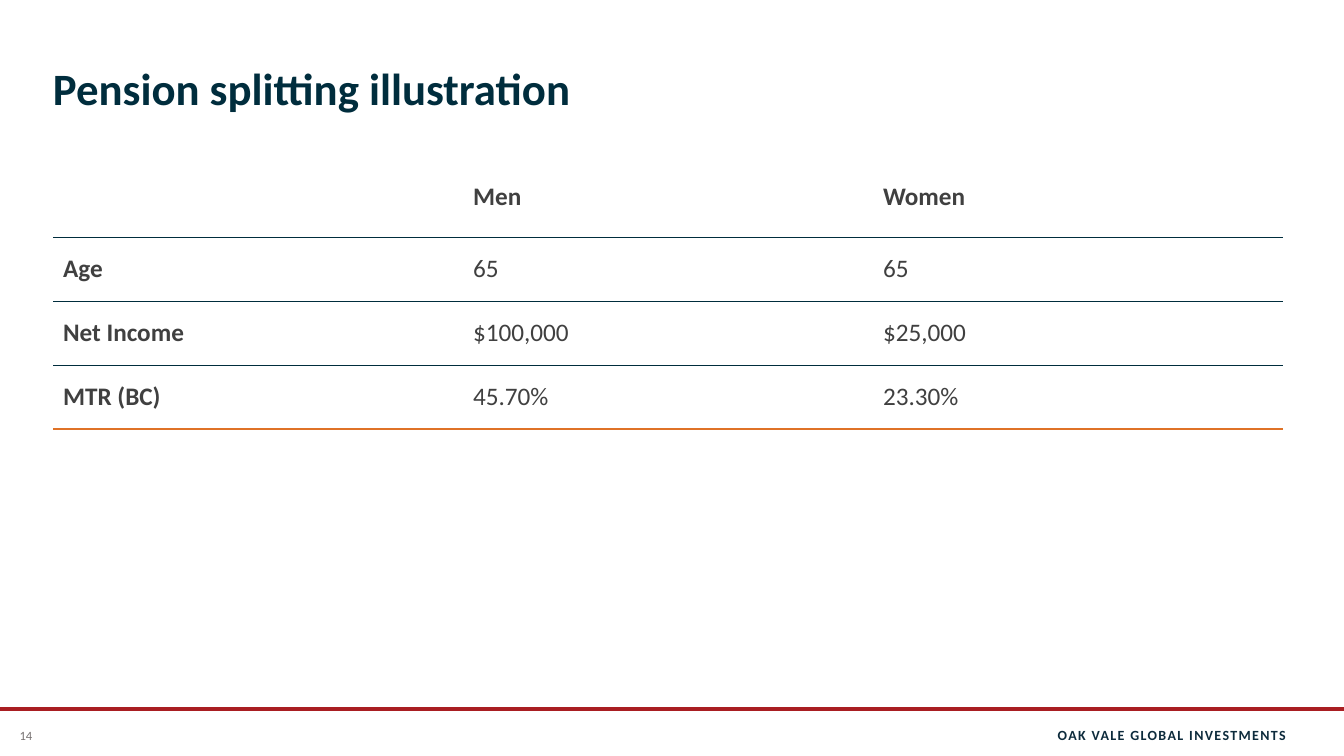
from lxml.etree import SubElement
from pptx import Presentation
from pptx.dml.color import RGBColor
from pptx.enum.shapes import MSO_CONNECTOR
from pptx.enum.text import MSO_ANCHOR, PP_ALIGN
from pptx.oxml.ns import qn
from pptx.util import Pt

EMU_PER_PX = 914400 / 100.8
SLIDE_W, SLIDE_H = 1344, 756
FONT = "Calibri"
NAVY, GREY, ORANGE, RED = "002D3D", "404040", "DF7227", "A91E22"
PLAIN_TABLE_STYLE = "{2D5ABB26-0587-4C30-8999-92F81FD0307C}"

SPOUSES = [
    ("", "Men", "Women"),
    ("Age", "65", "65"),
    ("Net Income", "$100,000", "$25,000"),
    ("MTR (BC)", "45.70%", "23.30%"),
]


def px(length):
    return round(length * EMU_PER_PX)


def rgb(hex_color):
    return RGBColor.from_string(hex_color)


def style_font(font, size, color, bold=False):
    font.name = FONT
    font.size = Pt(size)
    font.bold = bold
    font.color.rgb = rgb(color)


def add_label(slide, box, text, size, color, bold=False, align=PP_ALIGN.LEFT,
              anchor=MSO_ANCHOR.MIDDLE, side_inset=0):
    frame = slide.shapes.add_textbox(*map(px, box)).text_frame
    frame.word_wrap = True
    frame.vertical_anchor = anchor
    frame.margin_left = frame.margin_right = px(side_inset)
    frame.margin_top = frame.margin_bottom = 0
    frame.text = text
    paragraph = frame.paragraphs[0]
    paragraph.alignment = align
    run = paragraph.runs[0]
    style_font(run.font, size, color, bold)
    return run


def add_border(cell, side, color, width):
    """Draw one cell edge; side is T or B, added in that order."""
    line = SubElement(cell._tc.get_or_add_tcPr(), qn(f"a:ln{side}"), w=str(Pt(width)))
    fill = SubElement(line, qn("a:solidFill"))
    SubElement(fill, qn("a:srgbClr"), val=color)


def add_title(slide, box):
    add_label(slide, box, "Pension splitting illustration", 32, NAVY, True,
              anchor=MSO_ANCHOR.BOTTOM)


def add_pension_table(slide, box, header_height):
    row_count, column_count = len(SPOUSES), len(SPOUSES[0])
    table = slide.shapes.add_table(row_count, column_count, *map(px, box)).table
    table.first_row = table.horz_banding = False
    table._tbl.tblPr.find(qn("a:tableStyleId")).text = PLAIN_TABLE_STYLE

    for column in table.columns:
        column.width = px(box[2] / column_count)
    for row in table.rows:
        row.height = px((box[3] - header_height) / (row_count - 1))
    table.rows[0].height = px(header_height)

    for r, values in enumerate(SPOUSES):
        for c, value in enumerate(values):
            cell = table.cell(r, c)
            if r > 0:
                add_border(cell, "T", NAVY, 0.5)
            if r == row_count - 1:
                add_border(cell, "B", ORANGE, 1)
            else:
                add_border(cell, "B", NAVY, 0.5)
            cell.fill.background()
            cell.vertical_anchor = MSO_ANCHOR.MIDDLE
            cell.text = value
            style_font(cell.text_frame.paragraphs[0].font, 18, GREY, r == 0 or c == 0)
            for run in cell.text_frame.paragraphs[0].runs:
                style_font(run.font, 18, GREY, r == 0 or c == 0)


def add_footer(slide, box):
    left, top, width, height = box
    rule = slide.shapes.add_connector(
        MSO_CONNECTOR.STRAIGHT, px(left), px(top), px(left + width), px(top))
    rule.line.color.rgb = rgb(RED)
    rule.line.width = Pt(2.25)
    SubElement(rule._element.spPr, qn("a:effectLst"))

    label_top, label_height = top + 6, height - 7
    company = add_label(slide, (left + 975, label_top, 311, label_height),
                        "OAK VALE GLOBAL INVESTMENTS", 10, "0D2B3C", True, PP_ALIGN.RIGHT)
    company._r.get_or_add_rPr().set("spc", "100")
    add_label(slide, (left, label_top, 52, label_height), "14", 9, "767171",
              align=PP_ALIGN.CENTER, side_inset=10)


def main():
    presentation = Presentation()
    presentation.slide_width, presentation.slide_height = px(SLIDE_W), px(SLIDE_H)
    slide = presentation.slides.add_slide(presentation.slide_layouts[6])
    add_footer(slide, (0, 709, SLIDE_W, SLIDE_H - 709))
    add_pension_table(slide, (53, 156, 1230, 273), header_height=81)
    add_title(slide, (53, 0, 1230, 115))
    presentation.save("out.pptx")


if __name__ == "__main__":
    main()
